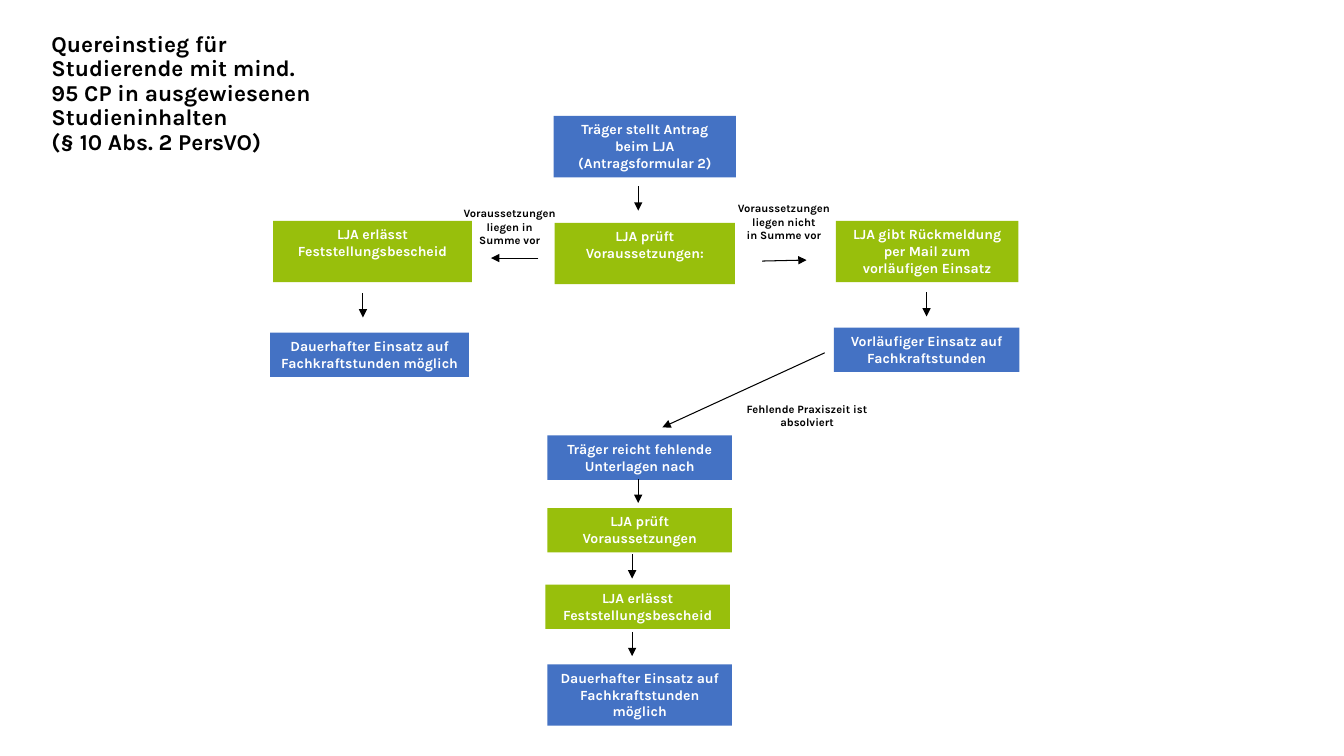
"""Builds the flow chart slide on lateral entry for students."""
from typing import NamedTuple

from lxml.etree import SubElement
from pptx import Presentation
from pptx.dml.color import RGBColor
from pptx.enum.shapes import MSO_CONNECTOR as Connector, MSO_SHAPE as Shape
from pptx.enum.text import MSO_ANCHOR as Anchor, PP_ALIGN as Align
from pptx.oxml.ns import qn
from pptx.util import Inches, Pt

BLUE = RGBColor(0x44, 0x72, 0xC4)
GREEN = RGBColor(0x98, 0xBF, 0x0C)
BLACK = RGBColor(0, 0, 0)
WHITE = RGBColor(0xFF, 0xFF, 0xFF)
FONT = "Karla"
TWO_LINES, THREE_LINES = 0.44, 0.61


class Step(NamedTuple):
    left: float
    top: float
    width: float
    height: float
    fill: RGBColor
    paragraphs: tuple[str, ...]


class Label(NamedTuple):
    left: float
    top: float
    height: float
    paragraphs: tuple[str, ...]


class Arrow(NamedTuple):
    x1: float
    y1: float
    x2: float
    y2: float


TITLE = (
    "Quereinstieg für Studierende mit mind. 95 CP in ausgewiesenen Studieninhalten",
    "(§ 10 Abs. 2 PersVO)",
)
STEPS = (
    Step(5.49, 1.15, 1.81, THREE_LINES, BLUE,
         ("Träger stellt Antrag beim LJA", "(Antragsformular 2)")),
    Step(5.5, 2.21, 1.79, THREE_LINES, GREEN, ("LJA prüft Voraussetzungen:",)),
    Step(8.29, 2.19, 1.81, THREE_LINES, GREEN,
         ("LJA gibt Rückmeldung per Mail zum vorläufigen Einsatz",)),
    Step(2.71, 2.19, 1.97, THREE_LINES, GREEN, ("LJA erlässt Feststellungsbescheid",)),
    Step(2.68, 3.3, 1.97, TWO_LINES, BLUE,
         ("Dauerhafter Einsatz auf Fachkraftstunden möglich",)),
    Step(8.27, 3.25, 1.84, TWO_LINES, BLUE,
         ("Vorläufiger Einsatz auf Fachkraftstunden",)),
    Step(5.43, 4.32, 1.83, TWO_LINES, BLUE, ("Träger reicht fehlende Unterlagen nach",)),
    Step(5.43, 5.04, 1.83, TWO_LINES, GREEN, ("LJA prüft Voraussetzungen",)),
    Step(5.41, 5.8, 1.83, TWO_LINES, GREEN, ("LJA erlässt Feststellungsbescheid",)),
    Step(5.43, 6.59, 1.83, THREE_LINES, BLUE,
         ("Dauerhafter Einsatz auf Fachkraftstunden möglich",)),
)
LABELS = (
    Label(4.33, 2, 0.5, ("Voraussetzungen liegen in", "Summe vor")),
    Label(7.05, 1.95, 0.5, ("Voraussetzungen liegen nicht", "in Summe vor")),
    Label(7.28, 3.94, 0.37, ("Fehlende Praxiszeit ist absolviert",)),
)
LABEL_WIDTH = 1.45
DOWN_STARTS = ((6.33, 1.85), (3.6, 2.91), (9.19, 2.9),
               (6.33, 4.75), (6.27, 5.5), (6.27, 6.27))
DOWN_LENGTH = 0.24
ARROWS = (
    *(Arrow(x, y, x, y + DOWN_LENGTH) for x, y in DOWN_STARTS),
    Arrow(5.34, 2.56, 4.87, 2.56),
    Arrow(7.56, 2.59, 8, 2.58),
    Arrow(8.18, 3.5, 6.57, 4.24),
)


def add_run(p, text: str, size: float, color: RGBColor) -> None:
    r = p.add_run()
    r.text = text
    r.font.name = FONT
    r.font.size = Pt(size)
    r.font.bold = True
    r.font.color.rgb = color


def write_centred(tf, paragraphs: tuple[str, ...], size: float, color: RGBColor) -> None:
    tf.word_wrap = True
    tf.vertical_anchor = Anchor.TOP
    for i, text in enumerate(paragraphs):
        p = tf.add_paragraph() if i else tf.paragraphs[0]
        p.alignment = Align.CENTER
        add_run(p, text, size, color)


def format_title(sp) -> None:
    sp.left, sp.top, sp.width, sp.height = map(Inches, (0.41, 0.28, 2.9, 1.3))
    tf = sp.text_frame
    tf.word_wrap = True
    tf.vertical_anchor = Anchor.MIDDLE
    p = tf.paragraphs[0]
    p.alignment = Align.LEFT
    p.line_spacing = 0.9
    for i, text in enumerate(TITLE):
        if i:
            p.add_line_break()
        add_run(p, text, 16.2, BLACK)


def add_step(s, step: Step) -> None:
    sp = s.shapes.add_shape(Shape.RECTANGLE, *map(Inches, step[:4]))
    sp.shadow.inherit = False
    sp.fill.solid()
    sp.fill.fore_color.rgb = step.fill
    sp.line.fill.background()
    write_centred(sp.text_frame, step.paragraphs, 10, WHITE)


def add_label(s, label: Label) -> None:
    box = (label.left, label.top, LABEL_WIDTH, label.height)
    sp = s.shapes.add_textbox(*map(Inches, box))
    write_centred(sp.text_frame, label.paragraphs, 8, BLACK)


def add_arrow(s, arrow: Arrow) -> None:
    sp = s.shapes.add_connector(Connector.STRAIGHT, *map(Inches, arrow))
    sp.line.color.rgb = BLACK
    sp.line.width = Pt(0.75)
    props = sp._element.spPr
    SubElement(props.find(qn("a:ln")), qn("a:tailEnd"), type="triangle")
    SubElement(props, qn("a:effectLst"))


def main() -> None:
    prs = Presentation()
    prs.slide_width, prs.slide_height = Inches(13.33), Inches(7.5)
    s = prs.slides.add_slide(prs.slide_layouts.get_by_name("Title Only"))
    format_title(s.shapes.title)
    for step in STEPS:
        add_step(s, step)
    for label in LABELS:
        add_label(s, label)
    for arrow in ARROWS:
        add_arrow(s, arrow)
    prs.save("out.pptx")


if __name__ == "__main__":
    main()
